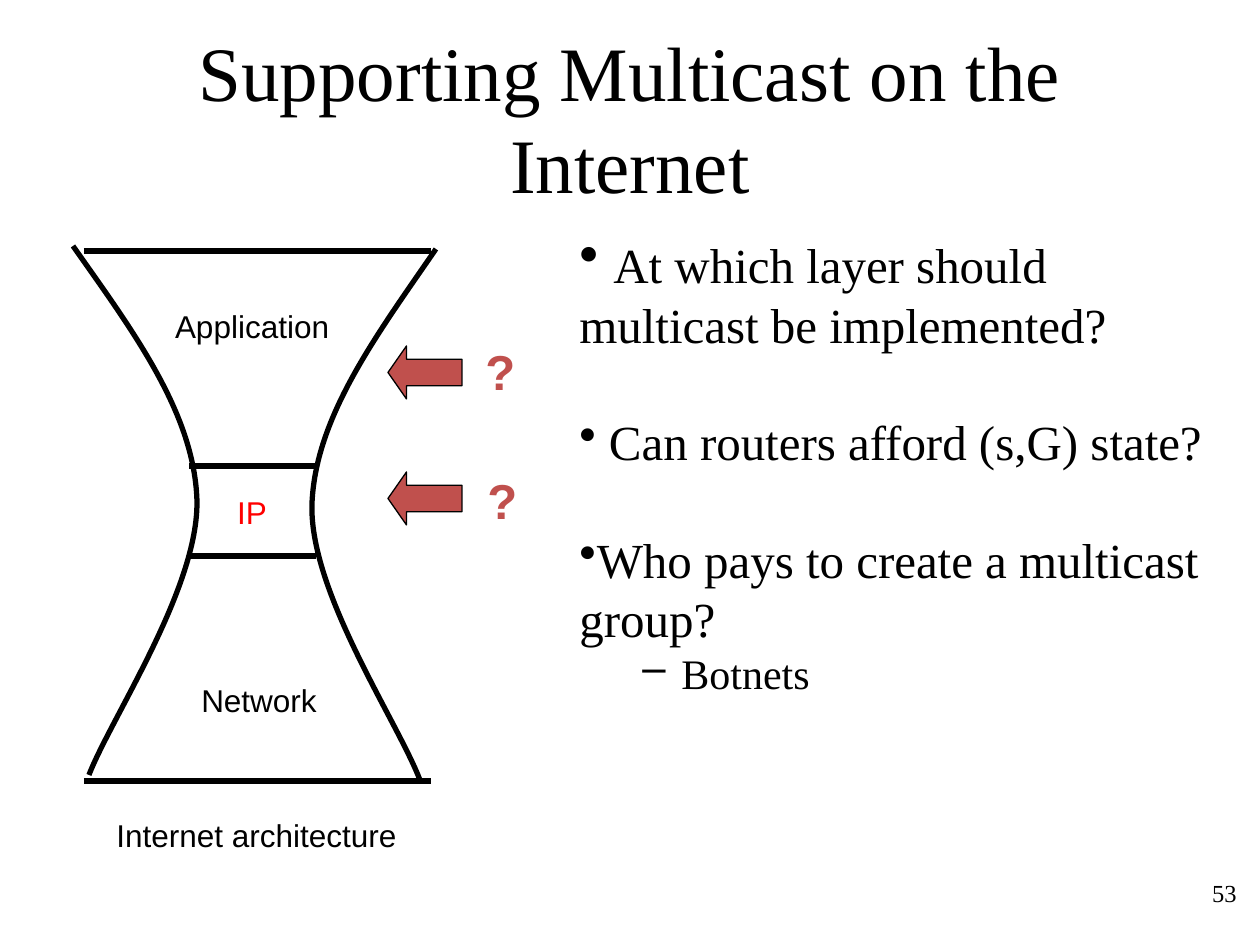
from lxml import etree
from pptx import Presentation
from pptx.dml.color import RGBColor
from pptx.enum.shapes import MSO_CONNECTOR, MSO_SHAPE
from pptx.enum.text import MSO_ANCHOR, MSO_AUTO_SIZE, PP_ALIGN
from pptx.oxml.ns import qn
from pptx.util import Pt

STRAIGHT, LEFT_ARROW = MSO_CONNECTOR.STRAIGHT, MSO_SHAPE.LEFT_ARROW
TOP, MIDDLE = MSO_ANCHOR.TOP, MSO_ANCHOR.MIDDLE
LEFT, CENTER, RIGHT = PP_ALIGN.LEFT, PP_ALIGN.CENTER, PP_ALIGN.RIGHT
GROW, FIXED = MSO_AUTO_SIZE.SHAPE_TO_FIT_TEXT, MSO_AUTO_SIZE.NONE

SCALE = 914400 / 126  # EMU in one px
THEME = {
    "serif": "Times New Roman", "sans": "Arial",
    "ink": RGBColor(0, 0, 0), "ip": RGBColor(255, 0, 0),
    "accent": RGBColor(0xC0, 0x50, 0x4D),
    "title": 44, "lead": 32, "body": 28, "sub": 24, "label": 18, "number": 14,
    "gap": 33.5, "stroke": 3, "thin": 0.75,
}


def px(*lengths):
    return [round(length * SCALE) for length in lengths]


def write(frame, text, para=None, size="label", font="sans", color="ink",
          bold=False, align=CENTER):
    """Add a run to the given paragraph, or to the first one of the frame."""
    para = para or frame.paragraphs[0]
    para.alignment = align
    span = para.add_run()
    span.text = text
    span.font.name, span.font.size = THEME[font], Pt(THEME[size])
    span.font.color.rgb, span.font.bold = THEME[color], bold


deck = Presentation()
deck.slide_width, deck.slide_height = px(1260, 945)
page = deck.slides.add_slide(deck.slide_layouts[6])
shapes = page.shapes

# Title, page number, diagram labels and question marks
serif = {"font": "serif"}
mark = {"size": "body", "color": "accent", "bold": True, "align": LEFT}
texts = [
    ("Supporting Multicast on the Internet", (63, 38, 1134, 157), MIDDLE, True,
     {"size": "title", **serif}),
    ("53", (987, 872, 262, 63), TOP, True,
     {"size": "number", "align": RIGHT, **serif}),
    ("Application", (136, 294, 232, 63), MIDDLE, False, {}),
    ("IP", (219, 480, 66, 63), MIDDLE, False, {"color": "ip"}),
    ("Network", (169, 668, 180, 63), MIDDLE, False, {}),
    ("Internet architecture", (57, 803, 399, 63), MIDDLE, False, {}),
    ("?", (473, 335, 55, 72), TOP, False, mark),
    ("?", (475, 464, 55, 72), TOP, False, mark),
]
for text, place, anchor, wrap, style in texts:
    frame = shapes.add_textbox(*px(*place)).text_frame
    frame.word_wrap, frame.vertical_anchor = wrap, anchor
    frame.auto_size = FIXED if wrap else GROW
    write(frame, text, **style)

# Questions, each as (level, [(text, size), ...])
questions = [
    (0, [(" ", "lead"), ("At which layer should multicast be implemented?", "body")]),
    (0, [(" Can routers afford (s,G) state?", "body")]),
    (0, [("Who pays to create a multicast group?", "body")]),
    (1, [("Botnets", "sub")]),
]
frame = shapes.add_textbox(*px(567, 221, 662, 624)).text_frame
frame.word_wrap = True
for index, (level, spans) in enumerate(questions):
    para = frame.add_paragraph() if index else frame.paragraphs[0]
    para.level = level
    para.space_before = Pt(THEME["gap"] if index and level == 0 else 0)
    for text, size in spans:
        write(frame, text, para=para, size=size, align=LEFT, **serif)
    margin, indent = px(102, -39) if level else (0, 0)
    properties = para._p.get_or_add_pPr()
    properties.set("marL", str(margin))
    properties.set("indent", str(indent))
    etree.SubElement(properties, qn("a:buChar")).set("char", "–" if level else "•")

# Hourglass sides: a start point, then two cubic curves of three points each
sides = [
    [(73, 246), (132, 330), (194, 412), (197, 500), (199, 588), (111, 718), (89, 775)],
    [(436, 249), (377, 335), (315, 417), (312, 505), (310, 593), (398, 722), (420, 780)],
]
for start, *points in sides:
    builder = shapes.build_freeform(*start, scale=SCALE)
    builder.add_line_segments(points, close=False)
    side = builder.convert_to_shape()
    side.shadow.inherit = False
    side.fill.background()
    side.line.color.rgb, side.line.width = THEME["ink"], Pt(THEME["stroke"])
    segments = side._element.xpath(".//a:lnTo")
    outline = segments[0].getparent()
    for first in range(0, len(segments), 3):
        curve = etree.SubElement(outline, qn("a:cubicBezTo"))
        for segment in segments[first:first + 3]:
            curve.append(segment[0])
            outline.remove(segment)

# Layer boundaries
for left, right, y in [(84, 431, 251), (189, 315, 466), (190, 316, 556), (84, 431, 781)]:
    edge = shapes.add_connector(STRAIGHT, *px(left, y, right, y))
    edge.line.color.rgb, edge.line.width = THEME["ink"], Pt(THEME["stroke"])
    etree.SubElement(edge._element.spPr, qn("a:effectLst"))

# Arrows at the candidate layers
for top in (346, 472):
    arrow = shapes.add_shape(LEFT_ARROW, *px(388, top, 74, 53))
    arrow.adjustments[0], arrow.adjustments[1] = 0.5, 0.35
    arrow.shadow.inherit = False
    arrow.fill.solid()
    arrow.fill.fore_color.rgb = THEME["accent"]
    arrow.line.color.rgb, arrow.line.width = THEME["ink"], Pt(THEME["thin"])

deck.save("out.pptx")
